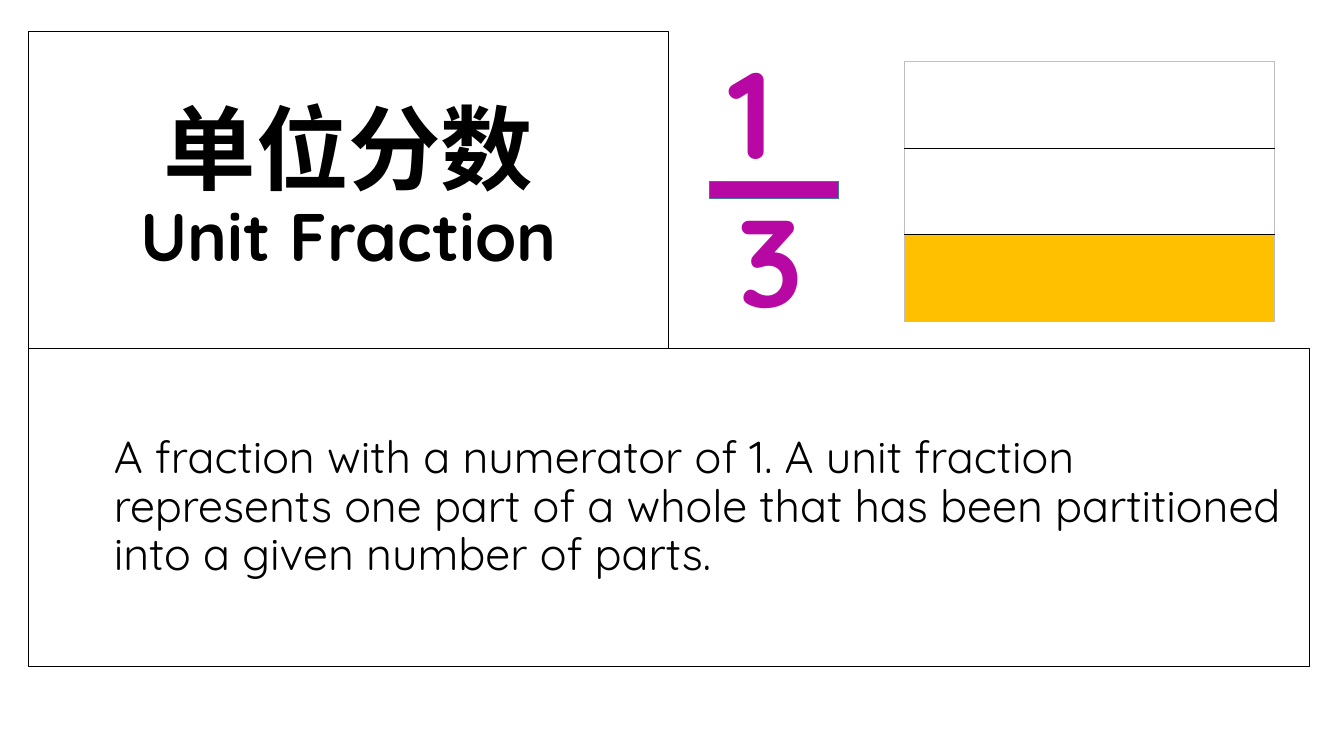
import pptx
import pptx.util
import pptx.dml.color
import pptx.enum.shapes
import pptx.enum.text
import pptx.oxml
import lxml.etree

Inches = pptx.util.Inches
Pt = pptx.util.Pt
MIDDLE = pptx.enum.text.MSO_ANCHOR.MIDDLE
CENTER = pptx.enum.text.PP_ALIGN.CENTER

COLORS = {"ink": "000000", "fraction": "B808A3", "bar_edge": "43739E",
          "part": "FFC000", "frame": "BFBFBF"}
LEFT, TOP = 0.28, 0.31
PANEL_HEIGHT = 3.15
FULL_WIDTH = 12.71
PARTS = 3
PART_WIDTH, PART_HEIGHT = 3.67, 0.86


def rgb(name):
    return pptx.dml.color.RGBColor.from_string(COLORS[name])


def add_run(paragraph, text, font, size, color="ink", bold=False):
    run = paragraph.add_run()
    run.text = text
    run.font.name = font
    run.font.size = Pt(size)
    run.font.bold = bold
    run.font.color.rgb = rgb(color)


presentation = pptx.Presentation()
presentation.slide_width = Inches(13.33)
presentation.slide_height = Inches(7.5)
slide = presentation.slides.add_slide(presentation.slide_layouts[5])

# Framed panels: term above, definition below
title = slide.shapes.title
title.left, title.top = Inches(LEFT), Inches(TOP)
title.width, title.height = Inches(FULL_WIDTH / 2), Inches(PANEL_HEIGHT)
definition = slide.shapes.add_textbox(
    Inches(LEFT), Inches(TOP + PANEL_HEIGHT), Inches(FULL_WIDTH), Inches(PANEL_HEIGHT))
for panel in (title, definition):
    panel.line.color.rgb = rgb("ink")
    panel.line.width = Pt(0.75)
    panel.text_frame.word_wrap = True
    panel.text_frame.auto_size = pptx.enum.text.MSO_AUTO_SIZE.NONE
    panel.text_frame.vertical_anchor = MIDDLE
    panel.text_frame.paragraphs[0].line_spacing = 0.9

paragraph = title.text_frame.paragraphs[0]
paragraph.alignment = CENTER
add_run(paragraph, "单位分数", "Lato", 66, bold=True)
paragraph.add_line_break()
add_run(paragraph, "Unit Fraction", "Quicksand", 48, bold=True)

paragraph = definition.text_frame.paragraphs[0]
properties = paragraph._p.get_or_add_pPr()
properties.set("marL", str(Inches(0.75)))
properties.set("indent", "0")
add_run(paragraph, "A fraction with a numerator of 1. A unit fraction represents one part "
        "of a whole that has been partitioned into a given number of parts.",
        "Quicksand", 32)

# One third as a number
fraction = slide.shapes.add_textbox(Inches(6.93), Inches(TOP), Inches(2.13), Inches(3.06))
fraction.text_frame.word_wrap = True
for index, (digit, margin) in enumerate([("1", 0.2), ("3", 0.3)]):
    paragraph = (fraction.text_frame.add_paragraph() if index
                 else fraction.text_frame.paragraphs[0])
    paragraph._p.get_or_add_pPr().set("marL", str(Inches(margin)))
    add_run(paragraph, digit, "Quicksand", 88, "fraction", True)

bar = slide.shapes.add_shape(pptx.enum.shapes.MSO_SHAPE.MATH_MINUS,
                             Inches(6.81), Inches(1.52), Inches(1.74), Inches(0.73))
bar.shadow.inherit = False
bar.fill.solid()
bar.fill.fore_color.rgb = rgb("fraction")
bar.line.color.rgb = rgb("bar_edge")
bar.line.width = Pt(1)

# One third as a shaded part of a whole
table = slide.shapes.add_table(PARTS, 1, Inches(8.97), Inches(0.61),
                               Inches(PART_WIDTH), Inches(PARTS * PART_HEIGHT)).table
table.first_row = False
table.horz_banding = False
for row in range(PARTS):
    table.rows[row].height = Inches(PART_HEIGHT)
    cell = table.cell(row, 0)
    cell_properties = cell._tc.get_or_add_tcPr()
    edges = {"lnL": "frame", "lnR": "frame",
             "lnT": "ink" if row else "frame",
             "lnB": "ink" if row < PARTS - 1 else "frame"}
    for edge, color in edges.items():
        line = lxml.etree.SubElement(cell_properties, pptx.oxml.ns.qn(f"a:{edge}"), w=str(Pt(1)))
        fill = lxml.etree.SubElement(line, pptx.oxml.ns.qn("a:solidFill"))
        lxml.etree.SubElement(fill, pptx.oxml.ns.qn("a:srgbClr"), val=COLORS[color])
    if row == PARTS - 1:
        cell.fill.solid()
        cell.fill.fore_color.rgb = rgb("part")
    else:
        cell.fill.background()

presentation.save("out.pptx")
